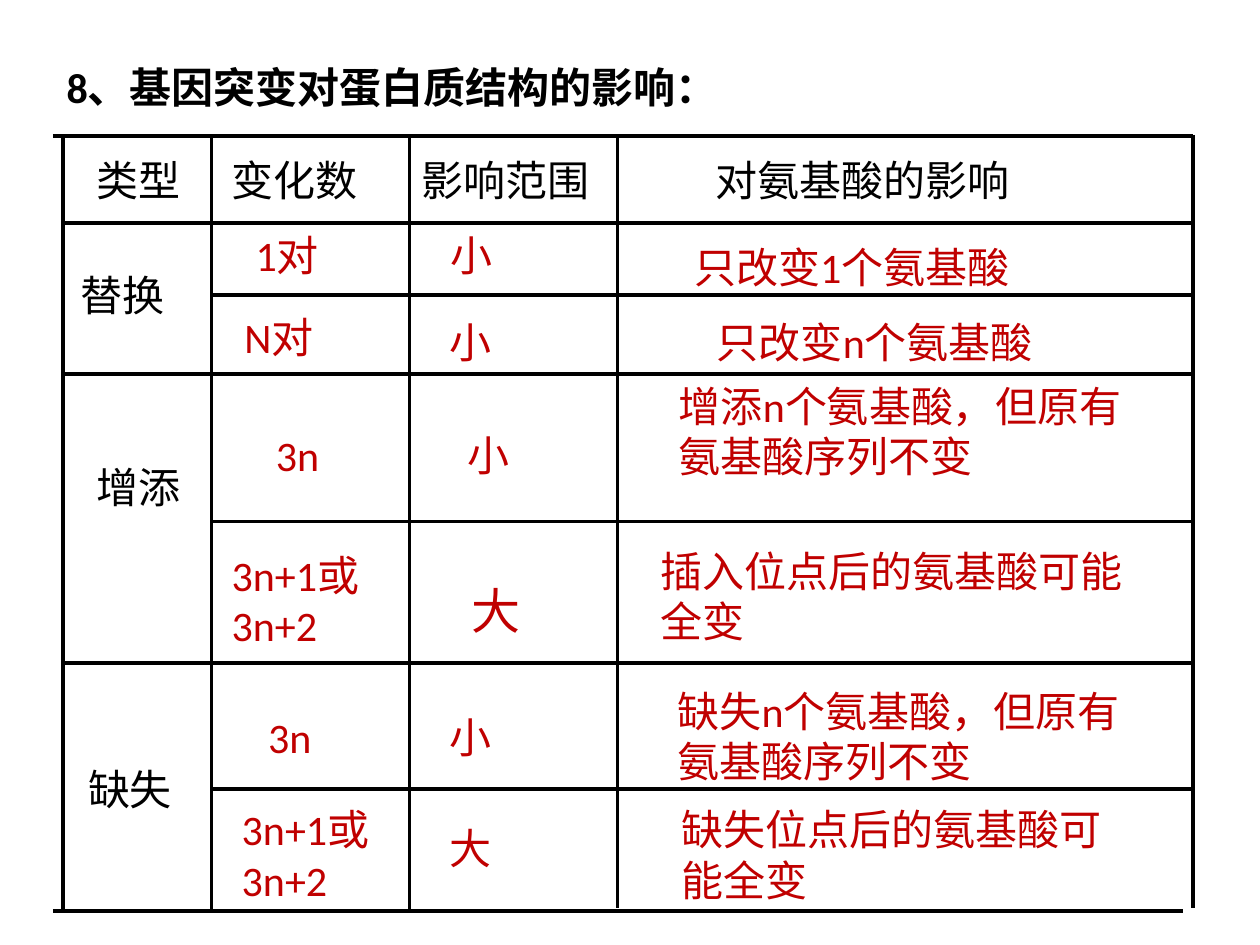
from lxml import etree
from pptx import Presentation
from pptx.dml.color import RGBColor
from pptx.enum.shapes import MSO_CONNECTOR
from pptx.oxml.ns import qn
from pptx.util import Inches, Pt

BLACK = RGBColor(0x00, 0x00, 0x00)
RED = RGBColor(0xC0, 0x00, 0x00)
FONT = "Calibri"

# Lengths are inches from the top left corner of the grid
COLUMN_EDGES = [0, 1.18, 2.75, 4.4, 8.97]
ROW_EDGES = [0, 0.69, 1.26, 1.89, 3.06, 4.18, 5.18, 6.15]
SUBROW_EDGES = {1.26, 3.06, 5.18}  # these split a mutation type in two
OVERHANG = 0.08
RAISE = 0.01

# Each entry: text, left, top, width, height
HEADERS = [
    ("类型", 0.17, 0.1, 1.01, 0.5),
    ("变化数", 1.24, 0.1, 1.34, 0.5),
    ("影响范围", 2.75, 0.1, 1.89, 0.5),
    ("对氨基酸的影响", 5.08, 0.1, 3.2, 0.5),
]
TYPES = [
    ("替换", 0.04, 1.01, 1.01, 0.5),
    ("增添", 0.17, 2.53, 1.01, 0.5),
    ("缺失", 0.1, 4.93, 0.88, 0.5),
]
CHANGE_COUNTS = [
    ("1对", 1.43, 0.69, 1.14, 0.5),
    ("N对", 1.34, 1.34, 1.32, 0.5),
    ("3n", 1.59, 2.28, 0.79, 0.5),
    ("3n+1或3n+2", 1.24, 3.23, 1.53, 0.91),
    ("3n", 1.53, 4.52, 0.79, 0.5),
    ("3n+1或3n+2", 1.32, 5.25, 1.31, 0.91),
]
RANGES = [
    ("小", 2.98, 0.69, 1.18, 0.5),
    ("小", 2.97, 1.38, 1.18, 0.5),
    ("小", 3.11, 2.28, 1.18, 0.5),
    ("小", 2.97, 4.52, 1.18, 0.5),
    ("大", 2.97, 5.4, 1.18, 0.5),
]
LARGE_RANGE = ("大", 3.14, 3.48, 1.18, 0.57)
EFFECTS = [
    ("只改变1个氨基酸", 4.91, 0.79, 2.98, 0.5),
    ("只改变n个氨基酸", 5.09, 1.38, 3.19, 0.5),
    ("增添n个氨基酸，但原有氨基酸序列不变", 4.79, 1.89, 3.78, 0.91),
    ("插入位点后的氨基酸可能全变", 4.64, 3.2, 4.08, 0.91),
    ("缺失n个氨基酸，但原有氨基酸序列不变", 4.78, 4.31, 3.9, 0.91),
    ("缺失位点后的氨基酸可能全变", 4.81, 5.25, 3.76, 0.91),
]


def add_text(slide, text, left, top, width, height, color=BLACK, size=24, bold=False):
    text_box = slide.shapes.add_textbox(left, top, width, height)
    text_frame = text_box.text_frame
    text_frame.word_wrap = True
    text_frame.text = text
    font = text_frame.paragraphs[0].runs[0].font
    font.name = FONT
    font.size = Pt(size)
    font.bold = bold
    font.color.rgb = color


def add_rule(slide, start_x, start_y, end_x, end_y):
    connector = slide.shapes.add_connector(
        MSO_CONNECTOR.STRAIGHT, start_x, start_y, end_x, end_y
    )
    connector.line.color.rgb = BLACK
    connector.line.width = Pt(2)
    etree.SubElement(connector._element.spPr, qn("a:effectLst"))


def add_title(slide, left, top, width, height):
    add_text(slide, "8、基因突变对蛋白质结构的影响：", left, top, width, height, bold=True)


def add_grid(slide, left, top):
    right, bottom = COLUMN_EDGES[-1], ROW_EDGES[-1]

    # Horizontal rules: the outer two overhang on the left
    for y in ROW_EDGES:
        start, end = 0, right
        if y in SUBROW_EDGES:
            start = COLUMN_EDGES[1]
        elif y in (0, bottom):
            start = -OVERHANG
        if y == bottom:
            end = right - OVERHANG
        add_rule(slide, left + Inches(start), top + Inches(y),
                 left + Inches(end), top + Inches(y))

    # Vertical rules: those of the last column sit slightly higher
    for index, x in enumerate(COLUMN_EDGES):
        raised = index >= 3
        start = -RAISE if raised else 0
        end = bottom - 2 * RAISE if raised else bottom
        add_rule(slide, left + Inches(x), top + Inches(start),
                 left + Inches(x), top + Inches(end))


def add_entries(slide, entries, left, top, color, size=24):
    for text, x, y, width, height in entries:
        add_text(slide, text, left + Inches(x), top + Inches(y),
                 Inches(width), Inches(height), color, size)


def main():
    presentation = Presentation()
    presentation.slide_width = Inches(10)
    presentation.slide_height = Inches(7.5)
    slide = presentation.slides.add_slide(presentation.slide_layouts[6])

    add_title(slide, Inches(0.43), Inches(0.44), Inches(5.28), Inches(0.5))

    left, top = Inches(0.5), Inches(1.08)
    add_grid(slide, left, top)
    add_entries(slide, HEADERS + TYPES, left, top, BLACK)
    add_entries(slide, CHANGE_COUNTS + RANGES + EFFECTS, left, top, RED)
    add_entries(slide, [LARGE_RANGE], left, top, RED, size=28)

    presentation.save("out.pptx")


if __name__ == "__main__":
    main()
